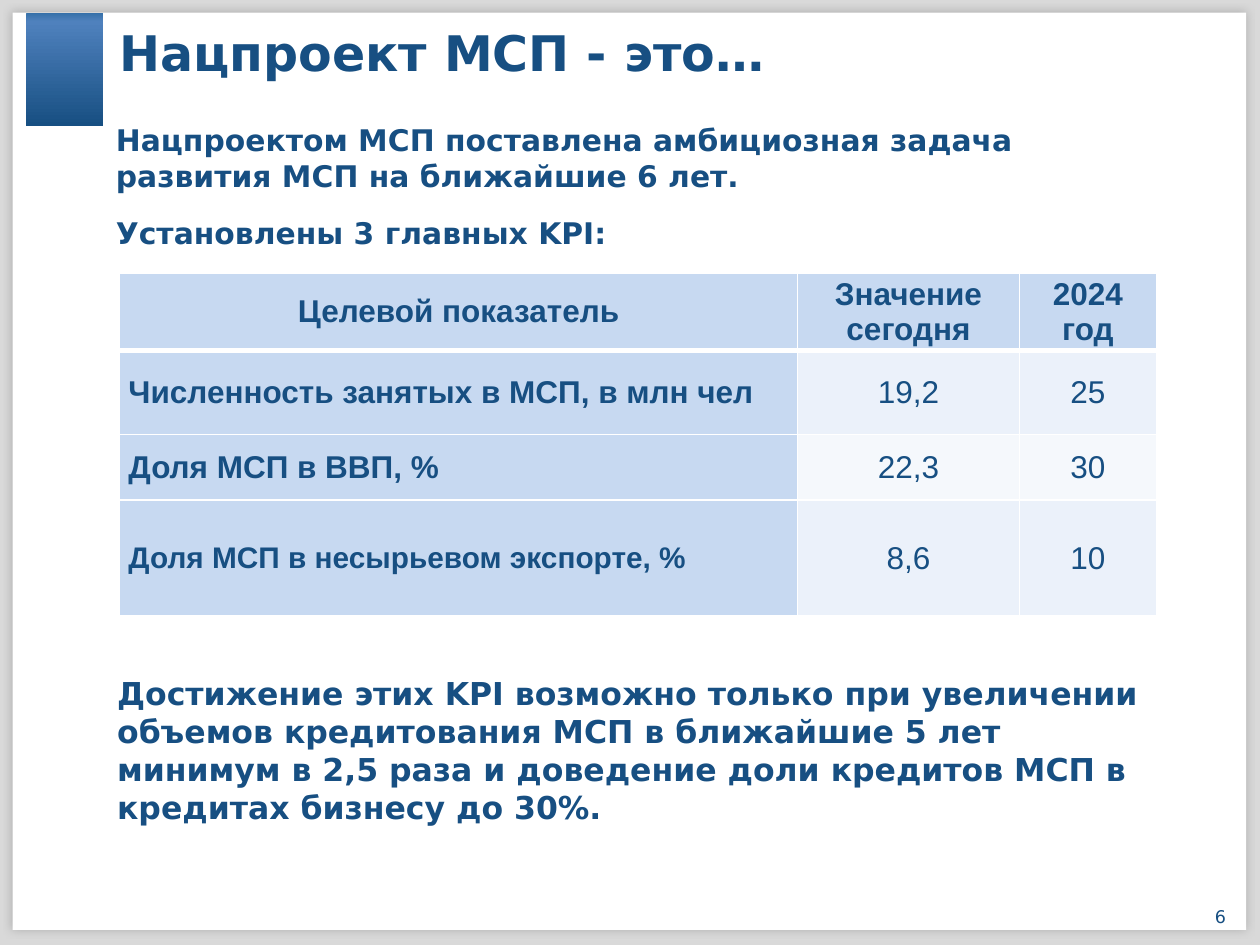
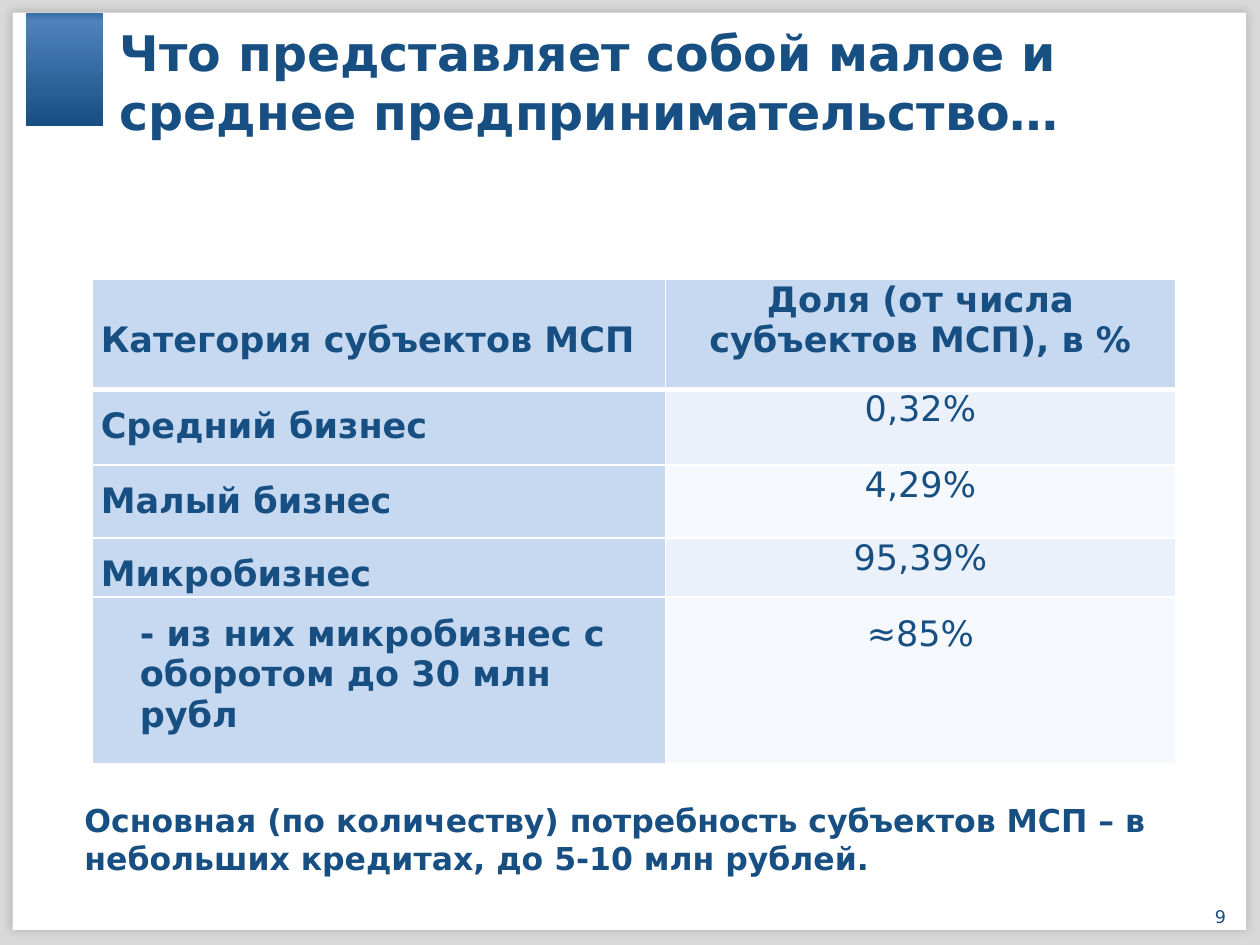
from copy import deepcopy

from lxml.etree import SubElement
from pptx import Presentation
from pptx.dml.color import RGBColor
from pptx.enum.shapes import MSO_SHAPE
from pptx.enum.text import MSO_ANCHOR, PP_ALIGN
from pptx.oxml import parse_xml
from pptx.oxml.ns import nsdecls, qn
from pptx.util import Inches, Pt

# Content
KPI = dict(
    title="Нацпроект МСП - это…",
    page="6",
    table=dict(
        at=(0.95, 2.17), cols=[5.38, 1.76, 1.09], rows=[0.61, 0.67, 0.52, 0.92],
        font="Arial", size=18, anchor=MSO_ANCHOR.MIDDLE,
        cells=[
            ("Целевой показатель", "Значение сегодня", "2024 год"),
            ("Численность занятых в МСП, в млн чел", "19,2", "25"),
            ("Доля МСП в ВВП, %", "22,3", "30"),
            ("Доля МСП в несырьевом экспорте, %", "8,6", "10"),
        ],
        center=[(0, 0)], sizes={(3, 0): 17}, tops={}, indents={}),
    notes=[
        ((0.92, 0.97, 8.26, 1.03), 17,
         ["Нацпроектом МСП поставлена амбициозная задача развития МСП "
          "на ближайшие 6 лет.",
          "Установлены 3 главных KPI:"]),
        ((0.93, 5.35, 8.26, 1.21), 18,
         ["Достижение этих KPI возможно только при увеличении объемов "
          "кредитования МСП в ближайшие 5 лет минимум в 2,5 раза и доведение "
          "доли кредитов МСП в кредитах бизнесу до 30%."]),
    ])

CATEGORIES = dict(
    title="Что представляет собой малое и среднее предпринимательство…",
    page="9",
    table=dict(
        at=(0.73, 2.22), cols=[4.55, 4.05], rows=[0.87, 0.6, 0.58, 0.47, 1.32],
        font="DejaVu Sans", size=20, anchor=MSO_ANCHOR.TOP,
        cells=[
            ("Категория субъектов МСП", "Доля (от числа субъектов МСП), в %"),
            ("Средний бизнес", "0,32%"),
            ("Малый бизнес", "4,29%"),
            ("Микробизнес", "95,39%"),
            ("- из них микробизнес с оборотом до 30 млн рубл", "≈85%"),
        ],
        center=[], sizes={}, indents={(4, 0): 0.31},
        tops={(0, 0): 0.32, (1, 0): 0.13, (2, 0): 0.13, (3, 0): 0.13,
              (4, 0): 0.13, (4, 1): 0.13}),
    notes=[
        ((0.67, 6.36, 8.81, 0.87), 18,
         ["Основная (по количеству) потребность субъектов МСП – в небольших "
          "кредитах, до 5-10 млн рублей."]),
    ])

# Shared style
FONT = "DejaVu Sans"
NAVY = RGBColor(0x17, 0x4F, 0x82)
WHITE = RGBColor(0xFF, 0xFF, 0xFF)
FRAME = RGBColor(0xD9, 0xD9, 0xD9)
HEAD = RGBColor(0xC7, 0xD9, 0xF1)
BANDS = [RGBColor(0xF5, 0xF8, 0xFC), RGBColor(0xEB, 0xF1, 0xFA)]
TAB_STOPS = [(0, RGBColor(0x34, 0x6F, 0xA7)), (0.08, RGBColor(0x4F, 0x81, 0xBD)),
             (1, NAVY)]
CELL_INSET = 0.07


def style(p, size, bold, font=FONT, align=PP_ALIGN.LEFT):
    p.alignment = align
    f = p.font
    f.name, f.size, f.bold = font, Pt(size), bold
    f.color.rgb = NAVY


def add_text(s, at, paragraphs, size, bold=True, align=PP_ALIGN.LEFT):
    tf = s.shapes.add_textbox(*map(Inches, at)).text_frame
    tf.word_wrap = True
    tf.margin_left = tf.margin_right = tf.margin_top = tf.margin_bottom = 0
    for i, text in enumerate(paragraphs):
        p = tf.paragraphs[0] if i == 0 else tf.add_paragraph()
        p.text = text
        if i:
            p.space_before = Pt(12)
        style(p, size, bold, align=align)


def add_rect(s, at, color=None):
    sp = s.shapes.add_shape(MSO_SHAPE.RECTANGLE, *map(Inches, at))
    sp.shadow.inherit = False
    sp.line.fill.background()
    if color is not None:
        sp.fill.solid()
        sp.fill.fore_color.rgb = color
    return sp


def add_frame(s):
    add_rect(s, (0, 0, 10, 7.5), FRAME)
    sheet = add_rect(s, (0.1, 0.1, 9.79, 7.28), WHITE)
    # Soft grey shadow around the sheet
    effects = sheet._element.spPr.find(qn("a:effectLst"))
    effects.append(parse_xml(
        f'<a:outerShdw {nsdecls("a")} blurRad="{Pt(5)}" dist="0" dir="0">'
        '<a:srgbClr val="808080"><a:alpha val="46000"/></a:srgbClr></a:outerShdw>'))
    # Corner tab with a three-stop gradient, top to bottom
    tab = add_rect(s, (0.21, 0.1, 0.61, 0.9))
    tab.fill.gradient()
    tab.fill.gradient_angle = 270
    stops = tab._element.spPr.find(qn("a:gradFill")).find(qn("a:gsLst"))
    stops.append(deepcopy(stops[0]))
    for stop, (position, color) in zip(tab.fill.gradient_stops, TAB_STOPS):
        stop.position = position
        stop.color.rgb = color


def set_borders(cell, row):
    tcPr = cell._tc.get_or_add_tcPr()
    widths = dict(L=1, R=1, T=3 if row == 1 else 1, B=3 if row == 0 else 1)
    for i, (side, width) in enumerate(widths.items()):
        ln = parse_xml(f'<a:ln{side} {nsdecls("a")} w="{Pt(width)}"/>')
        fill = SubElement(ln, qn("a:solidFill"))
        SubElement(fill, qn("a:srgbClr")).set("val", str(WHITE))
        tcPr.insert(i, ln)


def add_data_table(s, t):
    cols, rows = t["cols"], t["rows"]
    size = sum(cols), sum(rows)
    table = s.shapes.add_table(len(rows), len(cols),
                               *map(Inches, t["at"] + size)).table
    for column, width in zip(table.columns, cols):
        column.width = Inches(width)
    for r, (height, texts) in enumerate(zip(rows, t["cells"])):
        table.rows[r].height = Inches(height)
        for c, text in enumerate(texts):
            key = (r, c)
            heading = r == 0 or c == 0
            cell = table.cell(r, c)
            cell.vertical_anchor = t["anchor"]
            cell.margin_left = Inches(CELL_INSET + t["indents"].get(key, 0))
            cell.margin_right = Inches(CELL_INSET)
            cell.margin_top = Inches(t["tops"].get(key, 0))
            cell.margin_bottom = 0
            cell.fill.solid()
            cell.fill.fore_color.rgb = HEAD if heading else BANDS[r % 2]
            set_borders(cell, r)
            p = cell.text_frame.paragraphs[0]
            p.text = text
            centered = c > 0 or key in t["center"]
            style(p, t["sizes"].get(key, t["size"]), heading, t["font"],
                  PP_ALIGN.CENTER if centered else PP_ALIGN.LEFT)


def add_slide(prs, content):
    s = prs.slides.add_slide(prs.slide_layouts[6])
    add_frame(s)
    add_text(s, (0.95, 0.18, 8.81, 1.16), [content["title"]], 28)
    add_text(s, (9.48, 7.19, 0.41, 0.18), [content["page"]], 10, False,
             PP_ALIGN.CENTER)
    add_data_table(s, content["table"])
    for at, size, paragraphs in content["notes"]:
        add_text(s, at, paragraphs, size)


def main():
    prs = Presentation()
    prs.slide_width, prs.slide_height = Inches(10), Inches(7.5)
    for content in (KPI, CATEGORIES):
        add_slide(prs, content)
    prs.save("out.pptx")


if __name__ == "__main__":
    main()
